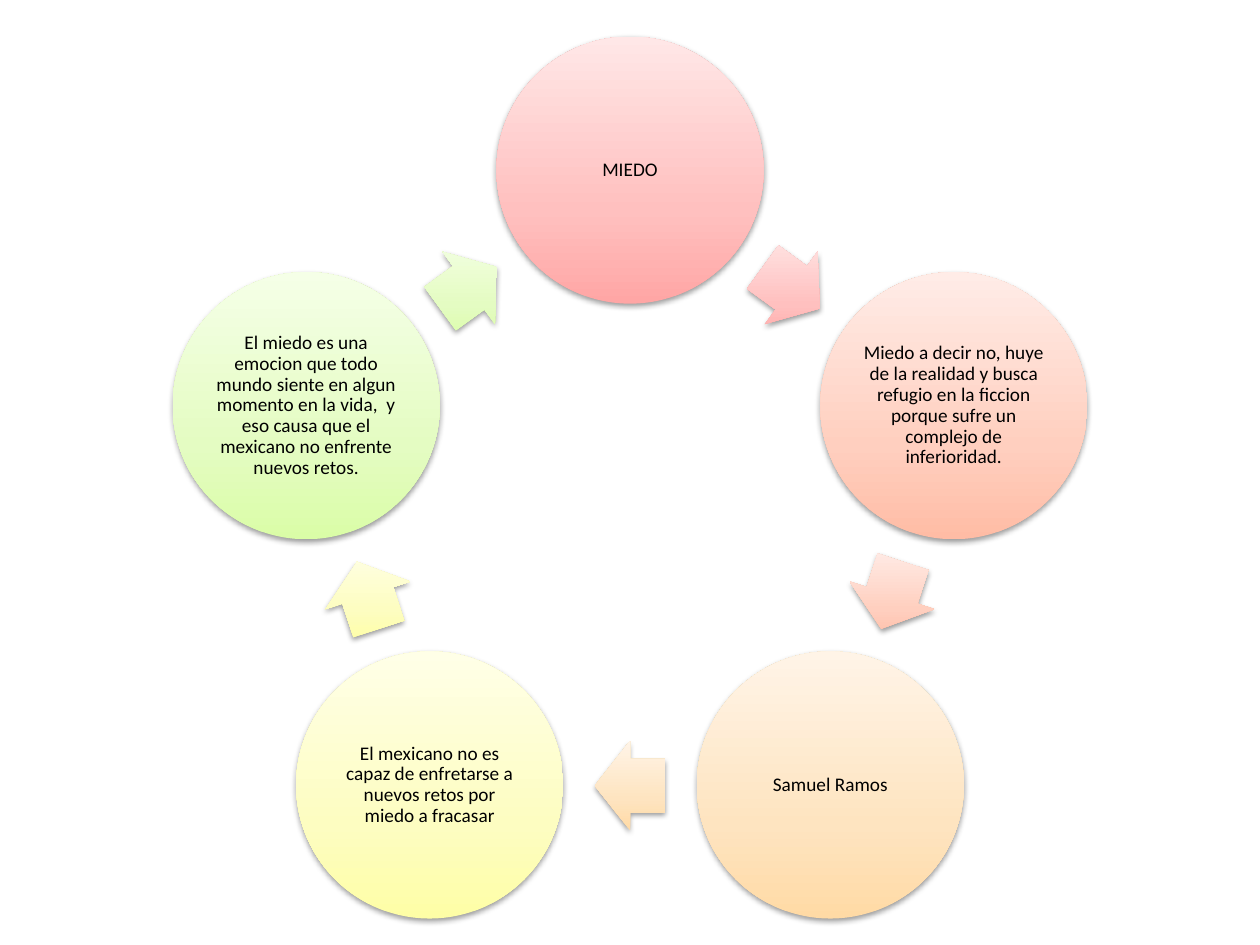
"""Build a slide with a five-step cycle of gradient circles joined by arrows."""
from dataclasses import dataclass
from math import cos, radians, sin

from pptx import Presentation
from pptx.dml.color import RGBColor
from pptx.enum.shapes import MSO_AUTO_SHAPE_TYPE as Shape
from pptx.enum.text import MSO_ANCHOR as Anchor, PP_ALIGN as Align
from pptx.oxml import parse_xml
from pptx.oxml.ns import nsdecls
from pptx.util import Pt

EMU_PER_PX = 9144
PAGE_WIDTH, PAGE_HEIGHT = 1000, 750
RING_X, RING_Y, RING_RADIUS = 500, 405, 270
CIRCLE_SIZE = 212
ARROW_LENGTH, ARROW_WIDTH = 56, 71
TEXT_MARGIN = 2

COLORS = {
    "text": "000000",
    "shadow": "000000",
    "red": ("FFA6A5", "FFC0BF", "FFE7E7"),
    "coral": ("FFBCA5", "FFCFBF", "FFECE7"),
    "orange": ("FFDAA5", "FEE4C0", "FFF4E7"),
    "yellow": ("FEFEA6", "FDFDC1", "FFFFE7"),
    "green": ("DAFDA7", "E4FCC2", "F5FFE7"),
}
STOPS = (0, 35, 100)
FRAME_FORMAT = {
    "word_wrap": True,
    "vertical_anchor": Anchor.MIDDLE,
    "margin_left": TEXT_MARGIN * EMU_PER_PX,
    "margin_right": TEXT_MARGIN * EMU_PER_PX,
    "margin_top": TEXT_MARGIN * EMU_PER_PX,
    "margin_bottom": TEXT_MARGIN * EMU_PER_PX,
}
PARA_FORMAT = {"alignment": Align.CENTER, "line_spacing": 0.9}
FONT_FORMAT = {"name": "Calibri", "size": Pt(11)}


@dataclass(frozen=True)
class Step:
    text: str
    color: str


STEPS = (
    Step("MIEDO", "red"),
    Step("Miedo a decir no, huye de la realidad y busca refugio en la ficcion "
         "porque sufre un complejo de inferioridad.", "coral"),
    Step("Samuel Ramos", "orange"),
    Step("El mexicano no es capaz de enfretarse a nuevos retos por miedo a "
         "fracasar", "yellow"),
    Step("El miedo es una emocion que todo mundo siente en algun momento en la "
         "vida,  y eso causa que el mexicano no enfrente nuevos retos.", "green"),
)
STEP_ANGLE = 360 / len(STEPS)
ARROW_RADIUS = RING_RADIUS * cos(radians(STEP_ANGLE / 2))


def emu(px: float) -> int:
    return round(px) * EMU_PER_PX


def apply_format(target, values: dict) -> None:
    for name, value in values.items():
        setattr(target, name, value)


def ring_point(angle: float, radius: float) -> tuple[float, float]:
    turn = radians(angle)
    return RING_X + radius * sin(turn), RING_Y - radius * cos(turn)


def paint(shape, color: str) -> None:
    stops = "".join(
        f'<a:gs pos="{stop * 1000}"><a:srgbClr val="{value}"/></a:gs>'
        for stop, value in zip(STOPS, COLORS[color]))
    gradient = parse_xml(
        f'<a:gradFill {nsdecls("a")} rotWithShape="0"><a:gsLst>{stops}</a:gsLst>'
        '<a:lin ang="16200000" scaled="0"/></a:gradFill>')
    effects = parse_xml(
        f'<a:effectLst {nsdecls("a")}><a:outerShdw blurRad="40000" dist="20000" '
        f'dir="5400000" rotWithShape="0"><a:srgbClr val="{COLORS["shadow"]}">'
        '<a:alpha val="38000"/></a:srgbClr></a:outerShdw></a:effectLst>')
    properties = shape._element.spPr
    properties.prstGeom.addnext(gradient)
    shape.line.fill.background()
    properties.append(effects)


def add_centered(page, kind, center: tuple[float, float],
                 width: int, height: int, color: str):
    left, top = center[0] - width / 2, center[1] - height / 2
    shape = page.shapes.add_shape(kind, emu(left), emu(top), emu(width), emu(height))
    paint(shape, color)
    return shape


def draw_circle(page, step: Step, angle: float) -> None:
    circle = add_centered(page, Shape.OVAL, ring_point(angle, RING_RADIUS),
                          CIRCLE_SIZE, CIRCLE_SIZE, step.color)
    frame = circle.text_frame
    apply_format(frame, FRAME_FORMAT)
    para = frame.paragraphs[0]
    apply_format(para, PARA_FORMAT)
    span = para.add_run()
    span.text = step.text
    apply_format(span.font, FONT_FORMAT)
    span.font.color.rgb = RGBColor.from_string(COLORS["text"])


def draw_arrow(page, step: Step, angle: float) -> None:
    arrow = add_centered(page, Shape.RIGHT_ARROW, ring_point(angle, ARROW_RADIUS),
                         ARROW_LENGTH, ARROW_WIDTH, step.color)
    arrow.adjustments[0] = 0.6
    arrow.adjustments[1] = 0.5
    arrow.rotation = angle


def main() -> None:
    deck = Presentation()
    deck.slide_width, deck.slide_height = emu(PAGE_WIDTH), emu(PAGE_HEIGHT)
    page = deck.slides.add_slide(deck.slide_layouts[6])
    for index, step in enumerate(STEPS):
        angle = index * STEP_ANGLE
        draw_circle(page, step, angle)
        draw_arrow(page, step, angle + STEP_ANGLE / 2)
    deck.save("out.pptx")


if __name__ == "__main__":
    main()
